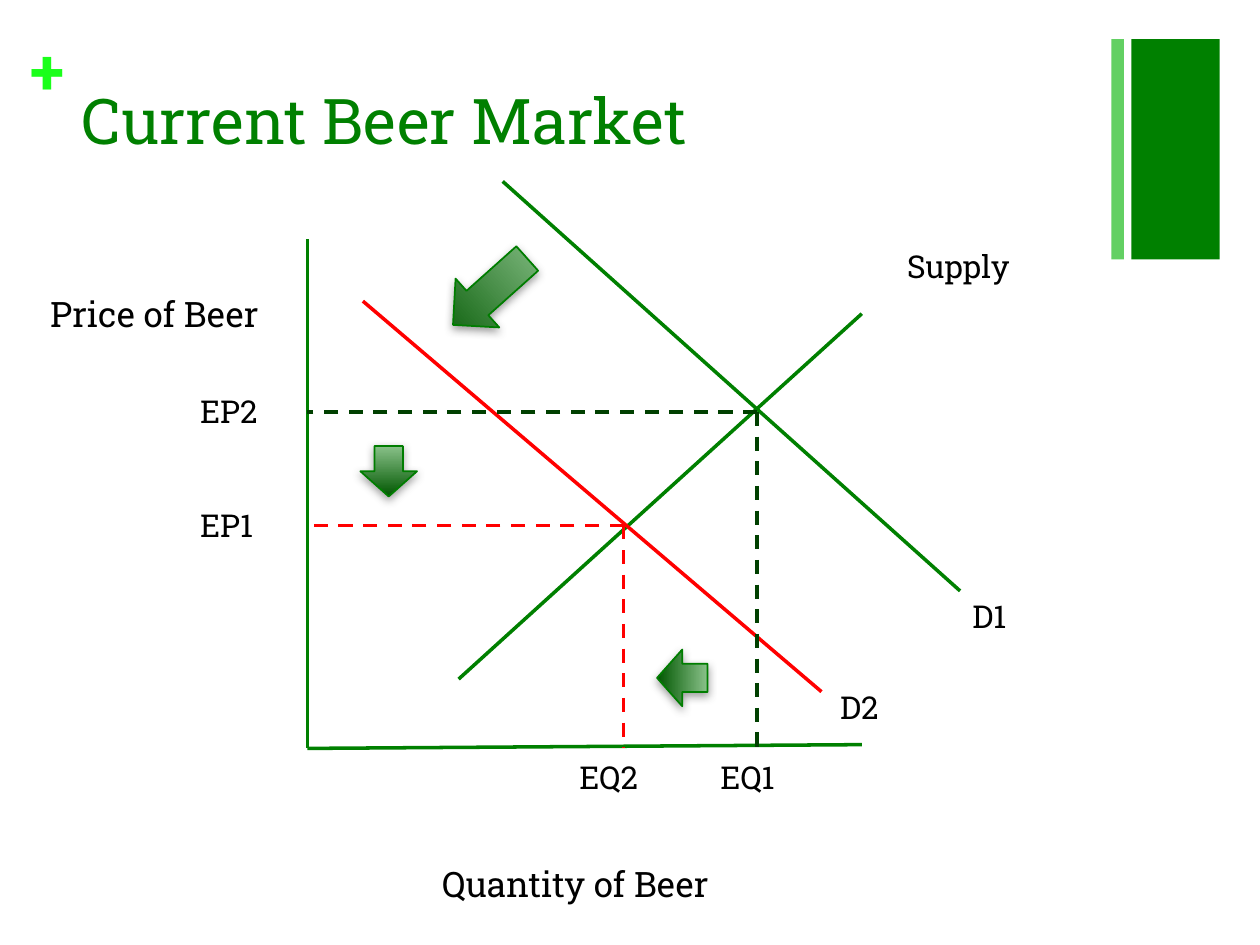
from lxml import etree
from pptx import Presentation
from pptx.dml.color import RGBColor
from pptx.enum import dml, shapes, text
from pptx.oxml import parse_xml
from pptx.oxml.ns import nsdecls, qn
from pptx.util import Inches, Pt

FONT = "Roboto Slab"
GREEN, DARK_GREEN, RED, BLACK = "008000", "004000", "FF0000", "000000"


def color(value):
    return RGBColor.from_string(value)


def add_text(slide, left, top, width, height, content, size=18, fill=BLACK, wrap=True):
    box = slide.shapes.add_textbox(Inches(left), Inches(top), Inches(width), Inches(height))
    frame = box.text_frame
    frame.word_wrap = wrap
    frame.text = content
    font = frame.paragraphs[0].runs[0].font
    font.name, font.size = FONT, Pt(size)
    font.color.rgb = color(fill)
    return box


def add_line(slide, start, end, stroke, dashed=False):
    points = [Inches(value) for value in (*start, *end)]
    connector = slide.shapes.add_connector(shapes.MSO_CONNECTOR.STRAIGHT, *points)
    connector.line.color.rgb = color(stroke)
    connector.line.width = Pt(2)
    if dashed:
        connector.line.dash_style = dml.MSO_LINE.DASH
    etree.SubElement(connector._element.spPr, qn("a:effectLst"))


def add_bar(slide, left, top, width, height, fill):
    shape = slide.shapes.add_shape(
        shapes.MSO_SHAPE.RECTANGLE, Inches(left), Inches(top), Inches(width), Inches(height))
    shape.shadow.inherit = False
    shape.fill.solid()
    shape.fill.fore_color.rgb = color(fill)
    shape.line.fill.background()


def add_arrow(slide, left, top, width, height, rotation):
    shape = slide.shapes.add_shape(
        shapes.MSO_SHAPE.UP_ARROW, Inches(left), Inches(top), Inches(width), Inches(height))
    shape.rotation = rotation
    shape.fill.gradient()
    shape.fill.gradient_angle = 270
    for stop, shade, position in zip(shape.fill.gradient_stops, ("005600", "89C189"), (0, 1)):
        stop.color.rgb = color(shade)
        stop.position = position
    shape.line.color.rgb = color("007D00")
    shape.line.width = Pt(1)
    shape._element.spPr.append(parse_xml(
        f'<a:effectLst {nsdecls("a")}><a:outerShdw blurRad="{Pt(5)}" dist="{Pt(2)}" '
        'dir="5400000" rotWithShape="0"><a:srgbClr val="808080"><a:alpha val="75000"/>'
        '</a:srgbClr></a:outerShdw></a:effectLst>'))


def add_decoration(slide, left, top, width, height):
    stripe = 0.1
    block = 0.7
    add_bar(slide, left + width - block, top, block, height, GREEN)
    add_bar(slide, left, top, stripe, height, "63D063")


def add_heading(slide, left, top, width, height):
    plus = add_text(slide, left, top, 0.29, 0.61, "+", 36, "1AFF1A")
    frame = plus.text_frame
    frame.margin_left = frame.margin_right = frame.margin_top = frame.margin_bottom = 0
    frame.paragraphs[0].runs[0].font.bold = True
    title = add_text(slide, left + 0.31, top + 0.35, width - 0.31, height - 0.35,
                     "Current Beer Market", 36, GREEN)
    title.text_frame.vertical_anchor = text.MSO_ANCHOR.TOP


def add_market_graph(slide, left, top, width, height):
    def at(x, y):
        return left + x, top + y

    axis_x, axis_y = 2.14, height
    curves = [
        ((axis_x, 0.46), (axis_x, axis_y), GREEN),
        ((axis_x, axis_y), (6.54, axis_y - 0.03), GREEN),
        ((3.34, 3.95), (6.54, 1.05), GREEN),
        ((3.69, 0), (width, 3.25), GREEN),
        ((6.22, 4.05), (2.58, 0.95), RED),
    ]
    for start, end, stroke in curves:
        add_line(slide, at(*start), at(*end), stroke)

    for x, y, stroke in ((4.65, 2.73, RED), (5.71, 1.83, DARK_GREEN)):
        add_line(slide, at(x, y), at(axis_x, y), stroke, True)
        add_line(slide, at(x, y), at(x, axis_y), stroke, True)

    labels = [
        ("D1", width, 3.25, 0.67),
        ("EQ1", 5.32, axis_y + 0.03, 0.9),
        ("EQ2", 4.2, axis_y + 0.03, 0.9),
        ("EP1", 1.19, 2.53, 0.95),
        ("EP2", 1.19, 1.62, 0.95),
        ("Supply", 6.8, 0.47, 1.71),
    ]
    for content, x, y, label_width in labels:
        add_text(slide, *at(x, y), label_width, 0.4, content)
    add_text(slide, *at(6.27, 3.97), 0.52, 0.4, "D2", wrap=False)
    add_text(slide, *at(0, 0.83), 2.13, 0.44, "Price of Beer", 20)
    add_text(slide, *at(3.11, 5.36), 2.59, 0.77, "Quantity of Beer", 20)

    add_arrow(slide, *at(3.33, 0.48), 0.52, 0.79, 228.2)
    add_arrow(slide, *at(2.56, 2.1), 0.45, 0.4, 180)
    add_arrow(slide, *at(4.89, 3.74), 0.45, 0.4, 270)


def main():
    presentation = Presentation()
    presentation.slide_width, presentation.slide_height = Inches(10), Inches(7.5)
    slide = presentation.slides.add_slide(presentation.slide_layouts[6])
    add_decoration(slide, 8.82, 0.31, 0.86, 1.75)
    add_heading(slide, 0.24, 0.25, 8.57, 1.1)
    add_market_graph(slide, 0.3, 1.44, 7.32, 4.5)
    presentation.save("out.pptx")


if __name__ == "__main__":
    main()
